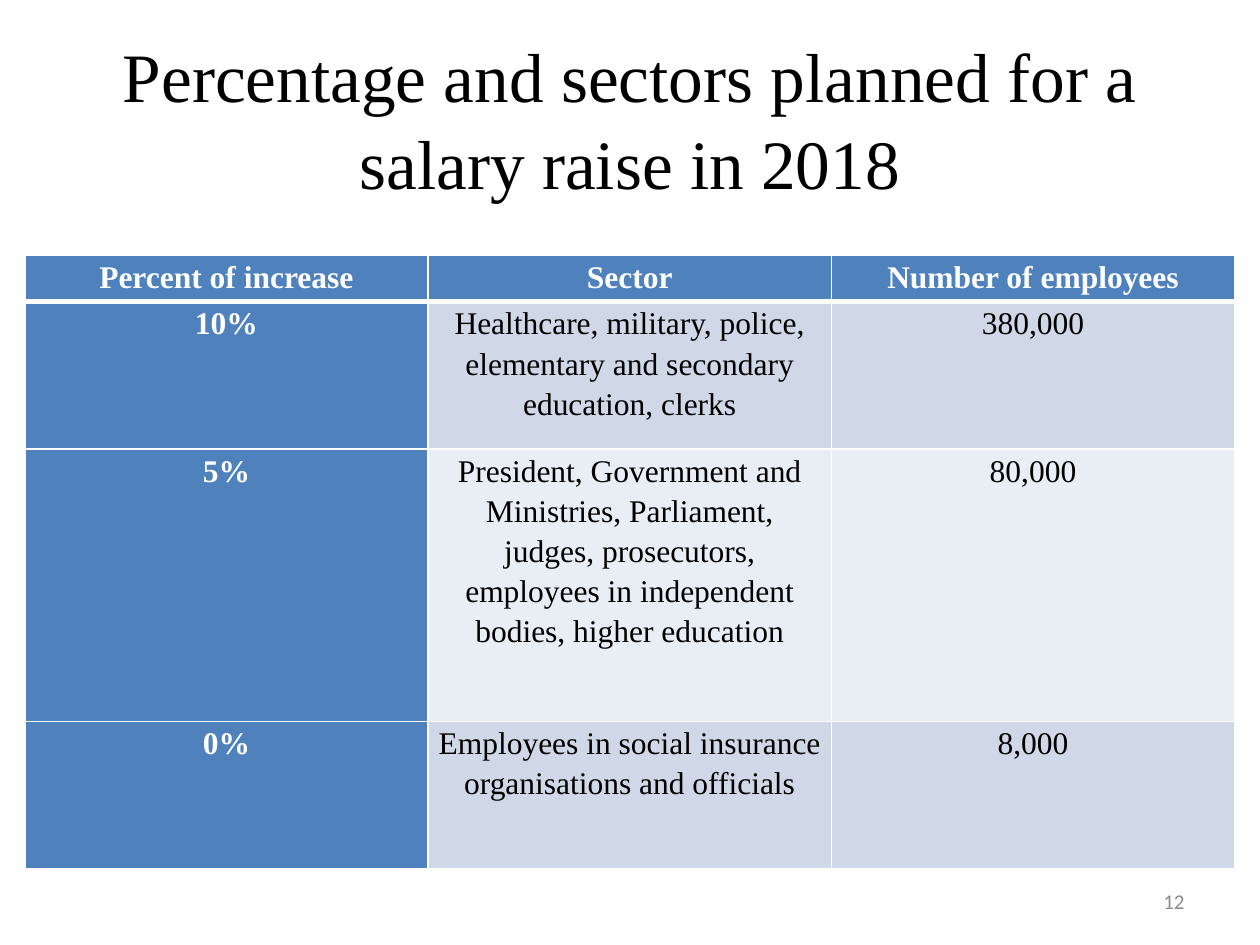
from lxml.etree import SubElement
from pptx import Presentation
from pptx.dml.color import RGBColor
from pptx.enum.text import MSO_ANCHOR as Anchor, MSO_AUTO_SIZE as AutoSize, PP_ALIGN as Align
from pptx.oxml.ns import qn
from pptx.util import Cm, Pt

BLACK = RGBColor(0, 0, 0)
WHITE = RGBColor(255, 255, 255)
GREY = RGBColor(0x8C, 0x8C, 0x8C)
BLUE = RGBColor(0x4F, 0x81, 0xBD)
BANDS = [RGBColor(0xD0, 0xD8, 0xE8), RGBColor(0xE9, 0xED, 0xF4)]
SERIF = "Times New Roman"

ROWS = [
    ("Percent of increase", "Sector", "Number of employees"),
    ("10%", "Healthcare, military, police, elementary and secondary education, clerks", "380,000"),
    ("5%", "President, Government and Ministries, Parliament, judges, prosecutors, "
           "employees in independent bodies, higher education", "80,000"),
    ("0%", "Employees in social insurance organisations and officials", "8,000"),
]
ROW_HEIGHTS = [0.94, 2.97, 5.49, 2.97]
COLUMN_WIDTH = 8.13


def apply(target, values):
    for name, value in values.items():
        setattr(target, name, value)


def write(frame, text, align, spacing, color, **font_format):
    para = frame.paragraphs[0]
    apply(para, {"alignment": align, "line_spacing": spacing})
    span = para.add_run()
    span.text = text
    apply(span.font, font_format)
    span.font.color.rgb = color


def add_title(page, text):
    box = page.shapes.title
    apply(box, {"left": Cm(1.27), "top": Cm(0.76), "width": Cm(22.86), "height": Cm(3.18)})
    apply(box.text_frame, {"word_wrap": True, "auto_size": AutoSize.NONE,
                           "vertical_anchor": Anchor.MIDDLE})
    write(box.text_frame, text, Align.CENTER, 1.04, BLACK, name=SERIF, size=Pt(39.6))


def add_borders(cell, widths):
    properties = cell._tc.get_or_add_tcPr()
    for side, width in widths.items():
        line = SubElement(properties, qn(f"a:ln{side}"), w=str(Pt(width)))
        fill = SubElement(line, qn("a:solidFill"))
        SubElement(fill, qn("a:srgbClr"), val=str(WHITE))


def format_cell(cell, text, row, column):
    heading = row == 0 or column == 0
    add_borders(cell, {"L": 1, "R": 1, "T": 3 if row == 1 else 1, "B": 3 if row == 0 else 1})
    cell.fill.solid()
    cell.fill.fore_color.rgb = BLUE if heading else BANDS[(row - 1) % 2]
    apply(cell, {"margin_left": Cm(0.18), "margin_right": Cm(0.18),
                 "margin_top": 0, "margin_bottom": 0})
    write(cell.text_frame, text, Align.CENTER, 1.15, WHITE if heading else BLACK,
          name=SERIF, size=Pt(18), bold=heading)


def add_raise_table(page):
    columns = len(ROWS[0])
    table = page.shapes.add_table(len(ROWS), columns, Cm(0.5), Cm(5.14),
                                  Cm(COLUMN_WIDTH * columns), Cm(sum(ROW_HEIGHTS))).table
    table.first_col = True
    for column in table.columns:
        column.width = Cm(COLUMN_WIDTH)
    for row, (height, texts) in enumerate(zip(ROW_HEIGHTS, ROWS)):
        table.rows[row].height = Cm(height)
        for column, text in enumerate(texts):
            format_cell(table.cell(row, column), text, row, column)


def add_page_number(page, text):
    box = page.shapes.add_textbox(Cm(18.2), Cm(17.66), Cm(5.93), Cm(1.01))
    apply(box.text_frame, {"word_wrap": True, "vertical_anchor": Anchor.MIDDLE})
    write(box.text_frame, text, Align.RIGHT, 1.0, GREY, name="Calibri", size=Pt(12))


def main():
    deck = Presentation()
    apply(deck, {"slide_width": Cm(25.4), "slide_height": Cm(19.05)})
    page = deck.slides.add_slide(deck.slide_layouts[5])
    add_title(page, "Percentage and sectors planned for a salary raise in 2018")
    add_raise_table(page)
    add_page_number(page, "12")
    deck.save("out.pptx")


if __name__ == "__main__":
    main()
